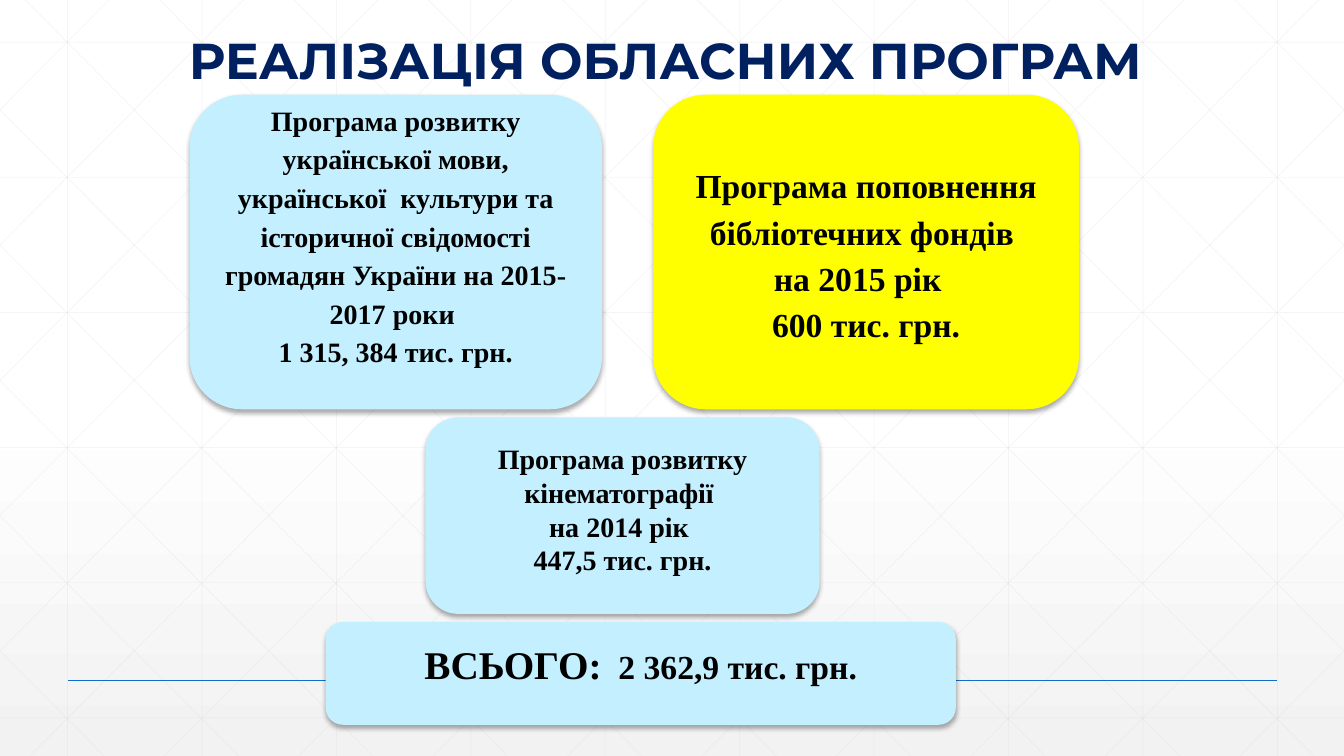
"""Slide on the funding of regional cultural programmes."""
from pptx import Presentation
from pptx.dml.color import RGBColor
from pptx.enum.shapes import MSO_CONNECTOR as Connector, MSO_SHAPE as Preset
from pptx.enum.text import MSO_ANCHOR as Anchor, MSO_AUTO_SIZE as AutoSize, PP_ALIGN as Align
from pptx.oxml.ns import qn
from pptx.util import Inches, Pt
from lxml.etree import SubElement

COLORS = {"white": "FFFFFF", "haze": "F2F2F2", "grid": "D9D9D9", "rule": "0F6FC6",
          "title": "002060", "text": "000000", "sky": "C4EFFF", "yellow": "FFFF00"}
WIDTH, HEIGHT = 13.33, 7.5
GRID_STEP = 4 / 3
SLANT = 7.45 / HEIGHT


def add_line(start, end, color, weight, opacity=100):
    line = slide.shapes.add_connector(Connector.STRAIGHT, *map(Inches, start + end))
    line.line.color.rgb = RGBColor.from_string(COLORS[color])
    line.line.width = Pt(weight)
    for tint in line.element.spPr.iter(qn("a:srgbClr")):
        SubElement(tint, qn("a:alpha"), val=str(opacity * 1000))
    SubElement(line.element.spPr, qn("a:effectLst"))


def add_run(paragraph, words, size, font, color):
    run = paragraph.add_run()
    run.text = words
    run.font.size = Pt(size)
    run.font.name = font
    run.font.bold = True
    run.font.color.rgb = RGBColor.from_string(COLORS[color])


deck = Presentation()
deck.slide_width, deck.slide_height = Inches(WIDTH), Inches(HEIGHT)
slide = deck.slides.add_slide(deck.slide_layouts[5])

backdrop = slide.background.fill
backdrop.gradient()
backdrop.gradient_angle = 270
for stop, position, color in zip(backdrop.gradient_stops, (0.53, 1), ("white", "haze")):
    stop.position = position
    stop.color.rgb = RGBColor.from_string(COLORS[color])

grid = []
for column in range(10):
    x = 0.67 + column * GRID_STEP
    grid.append(((x, 0), (x, HEIGHT)))
for row in range(6):
    y = 0.42 + row * 1.34
    grid.append(((0, y), (WIDTH, y)))
for diagonal in range(-5, 10):
    origin = 0.25 + diagonal * GRID_STEP
    top = max(0, -origin / SLANT)
    bottom = min(HEIGHT, (WIDTH - origin) / SLANT)
    left, right = origin + top * SLANT, origin + bottom * SLANT
    grid.append(((left, top), (right, bottom)))
    grid.append(((WIDTH - left, top), (WIDTH - right, bottom)))
for start, end in grid:
    add_line(start, end, "grid", 0.5, 25)
add_line((0.67, 6.75), (12.67, 6.75), "rule", 1)

title = slide.shapes.title
slide.shapes.element.append(title.element)
title.left, title.top, title.width, title.height = map(Inches, (1.67, 0.23, 10, 0.71))
title.text_frame.auto_size = AutoSize.NONE
title.text_frame.word_wrap = True
title.text_frame.vertical_anchor = Anchor.MIDDLE
heading = title.text_frame.paragraphs[0]
heading.alignment = Align.CENTER
add_run(heading, "РЕАЛІЗАЦІЯ ОБЛАСНИХ ПРОГРАМ ", 36, "Montserrat", "title")

programs = [
    ((4.22, 4.14, 3.91, 1.95), "sky", 1, 0.18, [
        [("Програма розвитку кінематографії ", 20)],
        [("на 2014 рік ", 20)],
        [("447,5 тис. грн.", 20)]]),
    ((1.88, 0.94, 4.09, 3.12), "sky", 1.15, 0.42, [
        [("Програма розвитку української мови, української  культури та "
          "історичної свідомості громадян України на 2015-2017 роки ", 20)],
        [("1 315, 384 тис. грн.", 20)]]),
    ((6.48, 0.94, 4.22, 3.12), "yellow", 1.15, 0.05, [
        [("Програма поповнення бібліотечних фондів ", 24)],
        [("на 2015 рік  ", 24)],
        [("600 тис. грн.", 24)]]),
    ((3.23, 6.17, 6.25, 1.02), "sky", 1.15, 0.31, [
        [("ВСЬОГО: ", 28), (" ", 20), ("2 362,9 тис. грн.", 24)]]),
]
for place, color, spacing, bottom_inset, paragraphs in programs:
    card = slide.shapes.add_shape(Preset.ROUNDED_RECTANGLE, *map(Inches, place))
    card.fill.solid()
    card.fill.fore_color.rgb = RGBColor.from_string(COLORS[color])
    card.line.fill.background()
    card.shadow.inherit = False
    effects = card.element.spPr.find(qn("a:effectLst"))
    shadow = SubElement(effects, qn("a:outerShdw"), blurRad=str(Pt(3.5)), dist=str(Pt(2.2)),
                        dir="5400000", algn="ctr", rotWithShape="0")
    shade = SubElement(shadow, qn("a:srgbClr"), val=COLORS["text"])
    SubElement(shade, qn("a:alpha"), val="32000")
    frame = card.text_frame
    frame.word_wrap = True
    frame.vertical_anchor = Anchor.MIDDLE
    frame.margin_bottom = Inches(bottom_inset)
    for index, runs in enumerate(paragraphs):
        paragraph = frame.add_paragraph() if index else frame.paragraphs[0]
        paragraph.alignment = Align.CENTER
        paragraph.line_spacing = spacing
        for words, size in runs:
            add_run(paragraph, words, size, "Times New Roman", "text")

deck.save("out.pptx")
